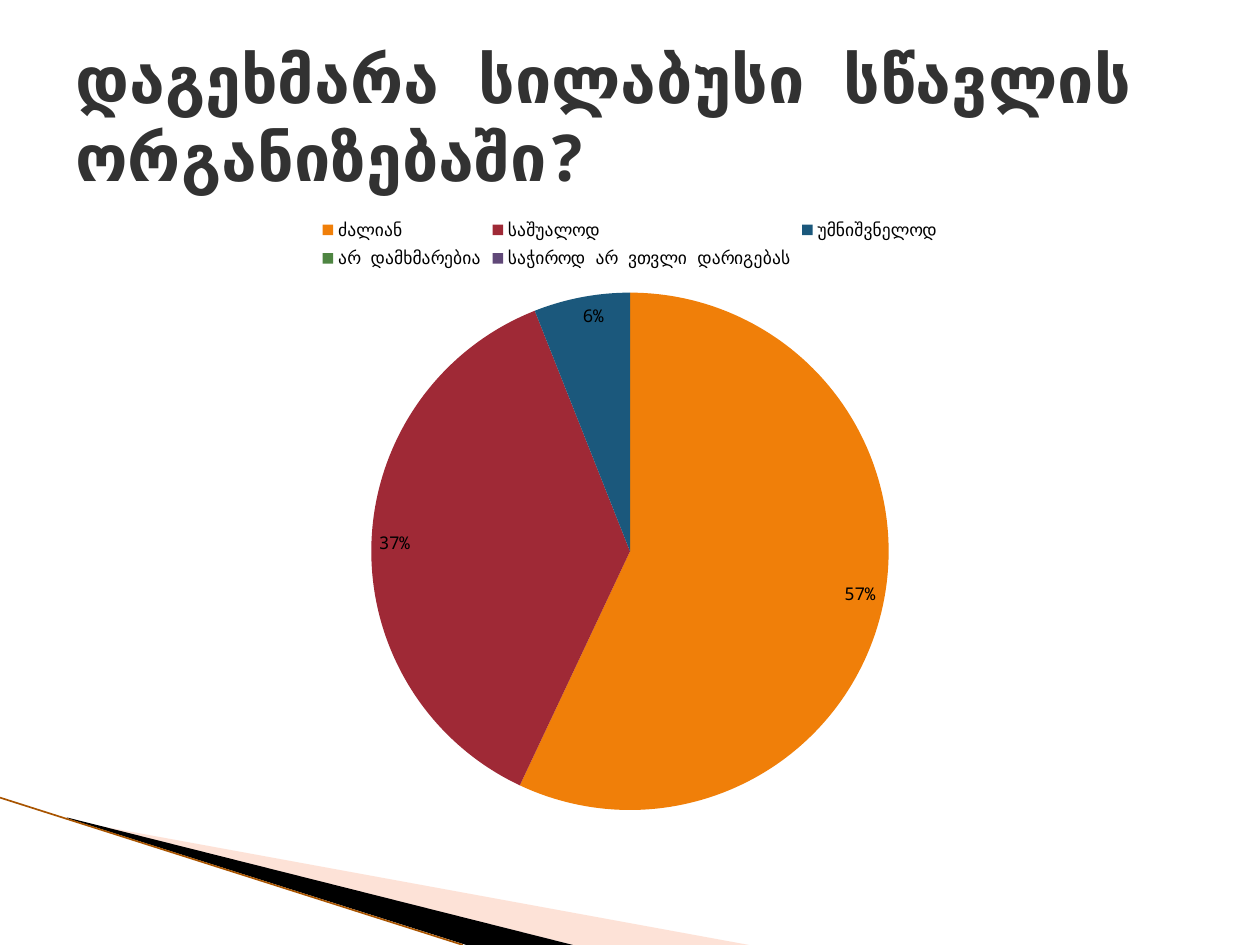
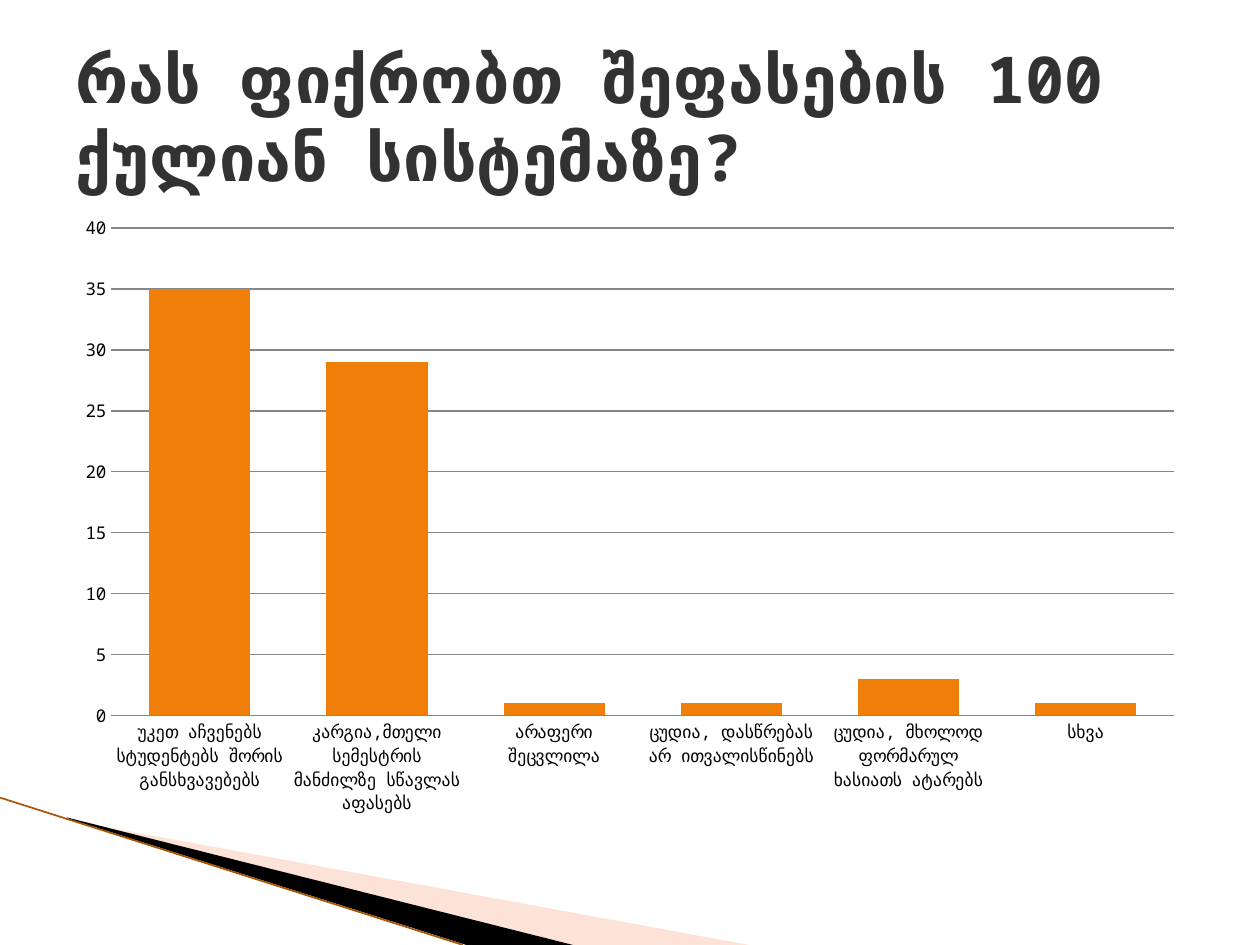
from lxml import etree
from pptx import Presentation
from pptx.chart.data import CategoryChartData as Data
from pptx.dml.color import RGBColor
from pptx.enum.chart import XL_CHART_TYPE as Kind
from pptx.enum.chart import XL_LABEL_POSITION as Spot
from pptx.enum.chart import XL_LEGEND_POSITION as Side
from pptx.enum.chart import XL_TICK_MARK as Tick
from pptx.enum.shapes import MSO_CONNECTOR as Link
from pptx.enum.text import MSO_ANCHOR as Anchor
from pptx.oxml.ns import qn
from pptx.util import Cm, Pt

FONT = "Noto Sans Mono"
INK, BLACK, GREY = "323232", "000000", "868686"
PINK, RUST = "FCB79B", "A85400"
HUES = ["F07F09", "9F2936", "1B587C", "4E8542", "604878"]
TITLE = (1.27, 0.76, 22.86, 3.18)
PLOT = (1.27, 4.11, 22.86, 12.57)
BAND = (0, 16.08, 15.1, 2.97)


def rgb(code):
    """Turn a hex string into a colour."""
    return RGBColor.from_string(code)


def paint(fill, code):
    """Give a fill one solid colour."""
    fill.solid()
    fill.fore_color.rgb = rgb(code)


def style(font, size, color=BLACK, bold=False):
    """Set the shared typeface with a size, colour and weight."""
    font.name, font.size, font.bold = FONT, Pt(size), bold
    font.color.rgb = rgb(color)


def write(slide, text, box, anchor=Anchor.MIDDLE, **fmt):
    """Place wrapped text in a box."""
    frame = slide.shapes.add_textbox(*map(Cm, box)).text_frame
    frame.word_wrap = True
    frame.vertical_anchor = anchor
    para = frame.paragraphs[0]
    run = para.add_run()
    run.text = text
    style(run.font, **fmt)


def wedge(slide, dots, color, alpha=None):
    """Draw a closed outline through points given in centimetres."""
    first, *rest = [(Cm(x), Cm(y)) for x, y in dots]
    pen = slide.shapes.build_freeform(*first)
    pen.add_line_segments(rest, close=True)
    shape = pen.convert_to_shape()
    shape.shadow.inherit = False
    shape.line.fill.background()
    paint(shape.fill, color)
    if alpha:
        tone = shape.fill._xPr.find(".//" + qn("a:srgbClr"))
        etree.SubElement(tone, qn("a:alpha"), val=str(alpha * 1000))


def band(slide, box):
    """Draw the slanted corner stripes across the box."""
    left, top, wide, high = box
    low = top + high
    tip = (left + 1.4, top + 0.43)
    wedge(slide, [(left + 1.4, top + 0.46), (left + wide, low),
                  (left + 11.55, low), tip], PINK, 40)
    wedge(slide, [(left + 1.35, top + 0.4), (left + 11.55, low),
                  (left + 9.4, low), tip], BLACK)
    line = slide.shapes.add_connector(
        Link.STRAIGHT, Cm(left), Cm(top), Cm(left + 9.33), Cm(low))
    line.line.color.rgb = rgb(RUST)
    line.line.width = Pt(0.95)
    etree.SubElement(line._element.spPr, qn("a:effectLst"))


def plot(slide, kind, rows, box):
    """Add a chart of one series and return it."""
    data = Data()
    data.categories = list(rows)
    data.add_series("Series 1", list(rows.values()))
    chart = slide.shapes.add_chart(kind, *map(Cm, box), data).chart
    chart.has_title = False
    chart.has_legend = False
    style(chart.font, 10)
    return chart


def pie(slide, rows, box):
    """Draw a pie with percent labels and a legend on top."""
    chart = plot(slide, Kind.PIE, rows, box)
    chart.has_legend = True
    chart.legend.position = Side.TOP
    chart.legend.include_in_layout = False
    body = chart.plots[0]
    body.vary_by_categories = True
    for num, hue in enumerate(HUES):
        paint(body.series[0].points[num].format.fill, hue)
    body.has_data_labels = True
    tags = body.data_labels
    tags.show_percentage, tags.show_value = True, False
    tags.number_format, tags.number_format_is_linked = "0%;;", False
    tags.position = Spot.INSIDE_END
    style(tags.font, 10)


def bars(slide, rows, box):
    """Draw columns over a plain grid."""
    chart = plot(slide, Kind.COLUMN_CLUSTERED, rows, box)
    body = chart.plots[0]
    body.gap_width, body.vary_by_categories = 75, False
    paint(body.series[0].format.fill, HUES[0])
    cats, vals = chart.category_axis, chart.value_axis
    for axis in (cats, vals):
        axis.major_tick_mark = axis.minor_tick_mark = Tick.NONE
    vals.minimum_scale, vals.maximum_scale, vals.major_unit = 0, 40, 5
    vals.format.line.fill.background()
    vals.has_major_gridlines = True
    for line in (cats.format.line, vals.major_gridlines.format.line):
        line.color.rgb = rgb(GREY)
        line.width = Pt(0.75)


PAGES = [
    ("დაგეხმარა სილაბუსი სწავლის ორგანიზებაში?", pie, {
        "ძალიან": 57,
        "საშუალოდ": 37,
        "უმნიშვნელოდ": 6,
        "არ დამხმარებია": 0,
        "საჭიროდ არ ვთვლი დარიგებას": 0,
    }),
    ("რას ფიქრობთ შეფასების 100 ქულიან სისტემაზე?", bars, {
        "უკეთ აჩვენებს სტუდენტებს შორის განსხვავებებს": 35,
        "კარგია,მთელი სემესტრის მანძილზე სწავლას აფასებს": 29,
        "არაფერი შეცვლილა": 1,
        "ცუდია, დასწრებას არ ითვალისწინებს": 1,
        "ცუდია, მხოლოდ ფორმარულ ხასიათს ატარებს": 3,
        "სხვა": 1,
    }),
]


def main():
    """Build every page and save the deck."""
    deck = Presentation()
    deck.slide_width, deck.slide_height = Cm(25.4), Cm(19.05)
    for title, draw, rows in PAGES:
        slide = deck.slides.add_slide(deck.slide_layouts[6])
        band(slide, BAND)
        write(slide, title, TITLE, size=36.9, color=INK, bold=True)
        draw(slide, rows, PLOT)
    deck.save("out.pptx")


if __name__ == "__main__":
    main()
